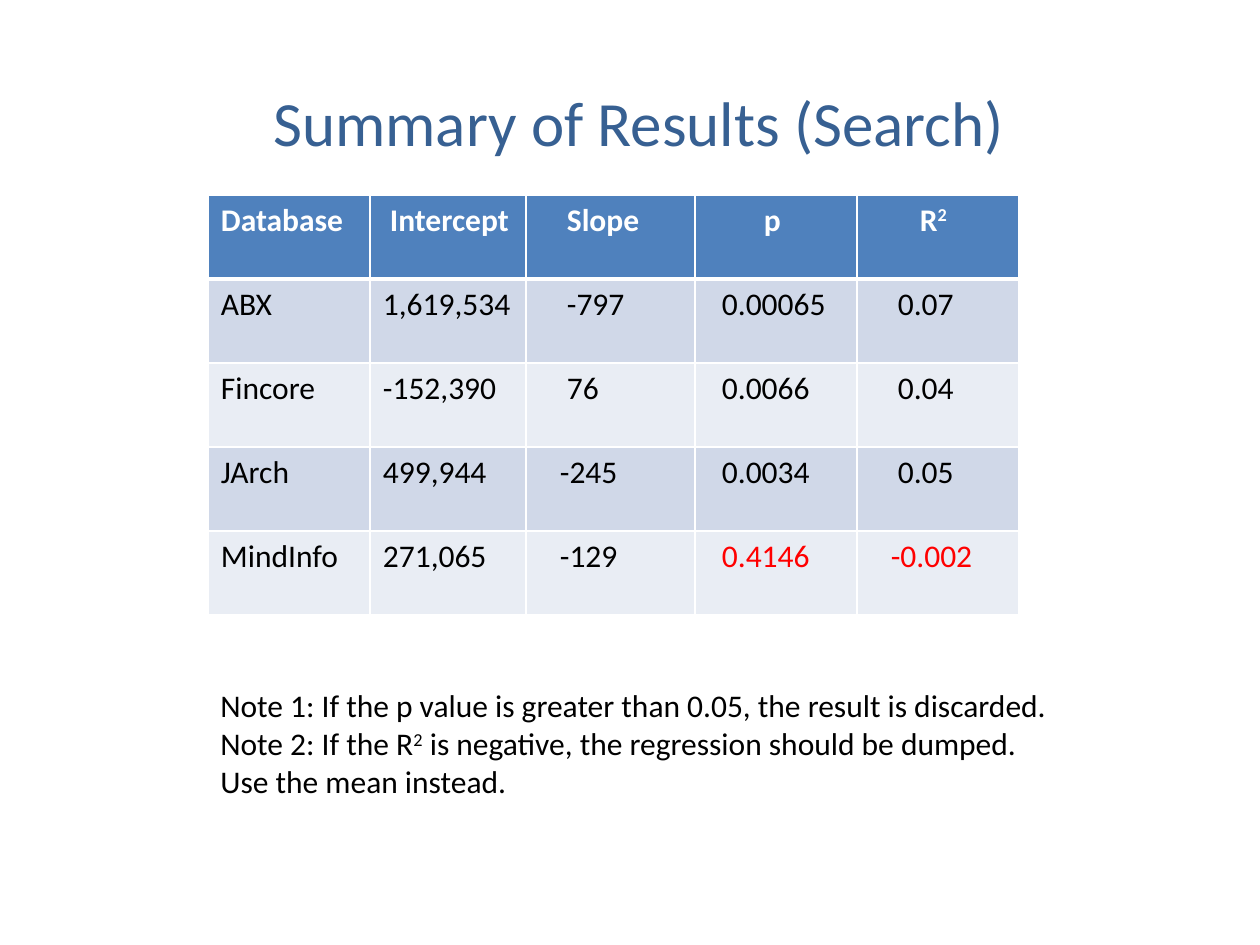
import dataclasses

import pptx
import pptx.dml.color
import pptx.enum.text
import pptx.oxml
import pptx.oxml.ns
import pptx.util

PX = 914400 // 126
ALIGN = pptx.enum.text.PP_ALIGN
ANCHOR = pptx.enum.text.MSO_ANCHOR
AUTO_SIZE = pptx.enum.text.MSO_AUTO_SIZE


@dataclasses.dataclass(frozen=True)
class Theme:
    font: str = "Calibri"
    title_size: int = 36
    body_size: int = 18
    title: str = "376092"
    text: str = "000000"
    alert: str = "FF0000"
    white: str = "FFFFFF"
    header: str = "4F81BD"
    bands: tuple = ("D0D8E8", "E9EDF4")


def px(n):
    return pptx.util.Emu(n * PX)


def rgb(color):
    return pptx.dml.color.RGBColor.from_string(color)


def set_all(obj, values):
    for name, value in values.items():
        setattr(obj, name, value)


class SlideBuilder:
    def __init__(self, slide, theme):
        self.s = slide
        self.theme = theme

    def fill_paragraph(self, p, text, size, color, bold=False):
        """Add the text as runs, turning ² into a raised 2."""
        before, mark, after = text.partition("²")
        for part, raised in ((before, False), ("2" if mark else "", True), (after, False)):
            if not part:
                continue
            r = p.add_run()
            r.text = part
            set_all(r.font, {"name": self.theme.font, "size": pptx.util.Pt(size), "bold": bold})
            r.font.color.rgb = rgb(color)
            if raised:
                r._r.get_or_add_rPr().set("baseline", "30000")

    def text(self, box, lines, size, color, align=ALIGN.LEFT, **frame):
        tf = self.s.shapes.add_textbox(*map(px, box)).text_frame
        set_all(tf, frame)
        for i, line in enumerate(lines):
            p = tf.add_paragraph() if i else tf.paragraphs[0]
            p.alignment = align
            self.fill_paragraph(p, line, size, color)

    def borders(self, cell, bottom):
        tcPr = cell._tc.get_or_add_tcPr()
        widths = {"lnL": 1, "lnR": 1, "lnT": 1, "lnB": bottom}
        for i, (tag, width) in enumerate(widths.items()):
            tcPr.insert(i, pptx.oxml.parse_xml(
                f'<a:{tag} {pptx.oxml.ns.nsdecls("a")} w="{pptx.util.Pt(width)}">'
                f'<a:solidFill><a:srgbClr val="{self.theme.white}"/></a:solidFill></a:{tag}>'))

    def table(self, left, top, widths, row_height, rows, indents, alerts):
        t = self.theme
        box = (left, top, sum(widths), row_height * len(rows))
        tbl = self.s.shapes.add_table(len(rows), len(widths), *map(px, box)).table
        for col, width in zip(tbl.columns, widths):
            col.width = px(width)
        for i, row in enumerate(rows):
            tbl.rows[i].height = px(row_height)
            for j, text in enumerate(row):
                cell = tbl.cell(i, j)
                cell.margin_left = px(13 + indents[i][j])
                cell.fill.solid()
                cell.fill.fore_color.rgb = rgb(t.bands[(i - 1) % 2] if i else t.header)
                self.borders(cell, 1 if i else 3)
                color = t.alert if (i, j) in alerts else t.text if i else t.white
                self.fill_paragraph(cell.text_frame.paragraphs[0], text, t.body_size, color,
                                    bold=i == 0)
        return tbl


ROWS = [
    ("Database", "Intercept", "Slope", "p", "R²"),
    ("ABX", "1,619,534", "-797", "0.00065", "0.07"),
    ("Fincore", "-152,390", "76", "0.0066", "0.04"),
    ("JArch", "499,944", "-245", "0.0034", "0.05"),
    ("MindInfo", "271,065", "-129", "0.4146", "-0.002"),
]
INDENTS = [
    (0, 7, 28, 0, 50),
    (0, 0, 28, 14, 28),
    (0, 0, 28, 14, 28),
    (0, 0, 21, 14, 28),
    (0, 0, 21, 14, 21),
]
NOTES = [
    "Note 1: If the p value is greater than 0.05, the result is discarded.",
    "Note 2: If the R² is negative, the regression should be dumped.",
    "Use the mean instead.",
]


def main():
    prs = pptx.Presentation()
    prs.slide_width, prs.slide_height = pptx.util.Inches(10), pptx.util.Inches(7.5)
    theme = Theme()
    b = SlideBuilder(prs.slides.add_slide(prs.slide_layouts[6]), theme)

    b.text((63, 38, 1134, 157), ["Summary of Results (Search)"], theme.title_size, theme.title,
           ALIGN.CENTER, word_wrap=True, vertical_anchor=ANCHOR.MIDDLE,
           margin_left=px(30), margin_top=px(15))
    tbl = b.table(208, 195, (162, 156, 169, 162, 162), 84, ROWS, INDENTS, {(4, 3), (4, 4)})
    p_header = tbl.cell(0, 3)
    p_header.margin_right = px(20)
    p_header.text_frame.paragraphs[0].alignment = ALIGN.CENTER
    b.text((208, 680, 862, 127), NOTES, theme.body_size, theme.text,
           word_wrap=False, auto_size=AUTO_SIZE.SHAPE_TO_FIT_TEXT)

    prs.save("out.pptx")


if __name__ == "__main__":
    main()
